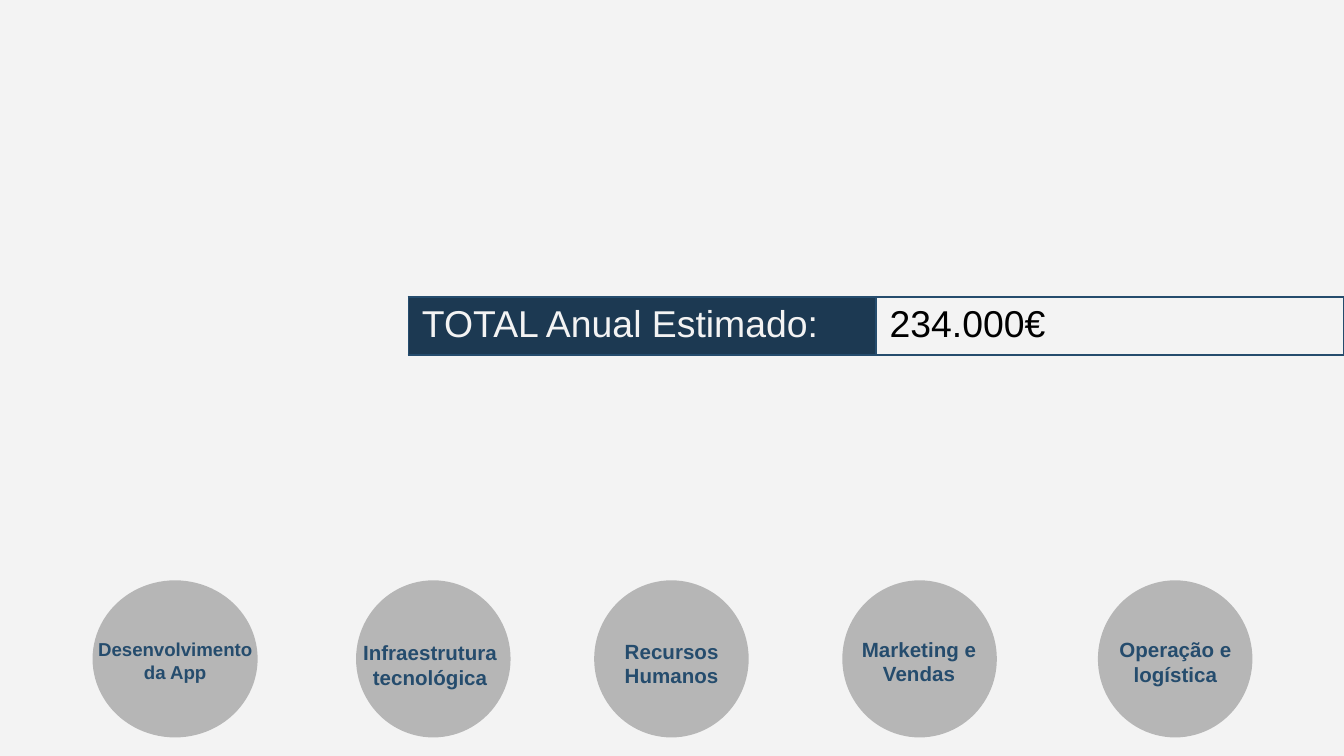
from dataclasses import dataclass

from lxml import etree
from pptx import Presentation
from pptx import util as u
from pptx.dml.color import RGBColor
from pptx.enum import shapes, text
from pptx.oxml.ns import qn


@dataclass(frozen=True)
class Theme:
    font: str = "Arial"
    background: str = "F3F3F3"
    navy: str = "1C3952"
    blue: str = "254C6D"
    gray: str = "B6B6B6"
    black: str = "000000"
    total_size: int = 20
    label_size: int = 11
    small_label_size: int = 10
    border_width: int = 1


THEME = Theme()
CIRCLE_TOP, CIRCLE_WIDTH, CIRCLE_HEIGHT = 10.97, 2.92, 2.97

# label, circle left, circle width, label left, label top, label width, size
CATEGORIES = [
    ("Desenvolvimento da App", 1.75, 3.12, 1.58, 11.94, 3.46, THEME.small_label_size),
    ("Infraestrutura tecnológica", 6.73, CIRCLE_WIDTH, 6.6, 11.97, 3.06, THEME.label_size),
    ("Recursos Humanos", 11.23, CIRCLE_WIDTH, 11.31, 11.95, 2.77, THEME.label_size),
    ("Marketing e Vendas", 15.92, CIRCLE_WIDTH, 15.72, 11.91, 3.3, THEME.label_size),
    ("Operação e logística", 20.75, CIRCLE_WIDTH, 20.6, 11.92, 3.23, THEME.label_size),
]


def paint(fill, color):
    fill.solid()
    fill.fore_color.rgb = RGBColor.from_string(color)


def style_text(text_frame, size, color, bold=False):
    for paragraph in text_frame.paragraphs:
        for run in paragraph.runs:
            run.font.name = THEME.font
            run.font.size = u.Pt(size)
            run.font.bold = bold
            run.font.color.rgb = RGBColor.from_string(color)


def add_borders(cell):
    """Draw all four cell borders, placed before the fill as the schema requires."""
    properties = cell._tc.get_or_add_tcPr()
    for index, side in enumerate(("a:lnL", "a:lnR", "a:lnT", "a:lnB")):
        line = etree.Element(qn(side), w=str(u.Pt(THEME.border_width)))
        fill = etree.SubElement(line, qn("a:solidFill"))
        etree.SubElement(fill, qn("a:srgbClr"), val=THEME.blue)
        properties.insert(index, line)


def add_total_table(slide):
    frame = slide.shapes.add_table(1, 2, u.Cm(7.72), u.Cm(5.61), u.Cm(17.68), u.Cm(1.1))
    table = frame.table
    table.first_row = False
    table.horz_banding = False
    label, amount = table.cell(0, 0), table.cell(0, 1)
    label.text_frame.text = "TOTAL Anual Estimado:"
    amount.text_frame.text = "234.000€"
    paint(label.fill, THEME.navy)
    amount.fill.background()
    for cell, color in ((label, THEME.background), (amount, THEME.black)):
        style_text(cell.text_frame, THEME.total_size, color)
        add_borders(cell)


def add_category(slide, label, left, width, label_left, label_top, label_width, size):
    group = slide.shapes.add_group_shape()
    circle = group.shapes.add_shape(
        shapes.MSO_SHAPE.OVAL,
        u.Cm(left), u.Cm(CIRCLE_TOP), u.Cm(width), u.Cm(CIRCLE_HEIGHT),
    )
    circle.shadow.inherit = False
    paint(circle.fill, THEME.gray)
    circle.line.fill.background()

    box = group.shapes.add_textbox(
        u.Cm(label_left), u.Cm(label_top), u.Cm(label_width), u.Cm(1.19)
    )
    text_frame = box.text_frame
    text_frame.word_wrap = True
    text_frame.auto_size = text.MSO_AUTO_SIZE.SHAPE_TO_FIT_TEXT
    text_frame.text = label
    text_frame.paragraphs[0].alignment = text.PP_ALIGN.CENTER
    style_text(text_frame, size, THEME.blue, bold=True)


def main():
    presentation = Presentation()
    presentation.slide_width = u.Cm(25.4)
    presentation.slide_height = u.Cm(14.29)
    slide = presentation.slides.add_slide(presentation.slide_layouts[6])
    paint(slide.background.fill, THEME.background)
    add_total_table(slide)
    for category in CATEGORIES:
        add_category(slide, *category)
    presentation.save("out.pptx")


if __name__ == "__main__":
    main()
